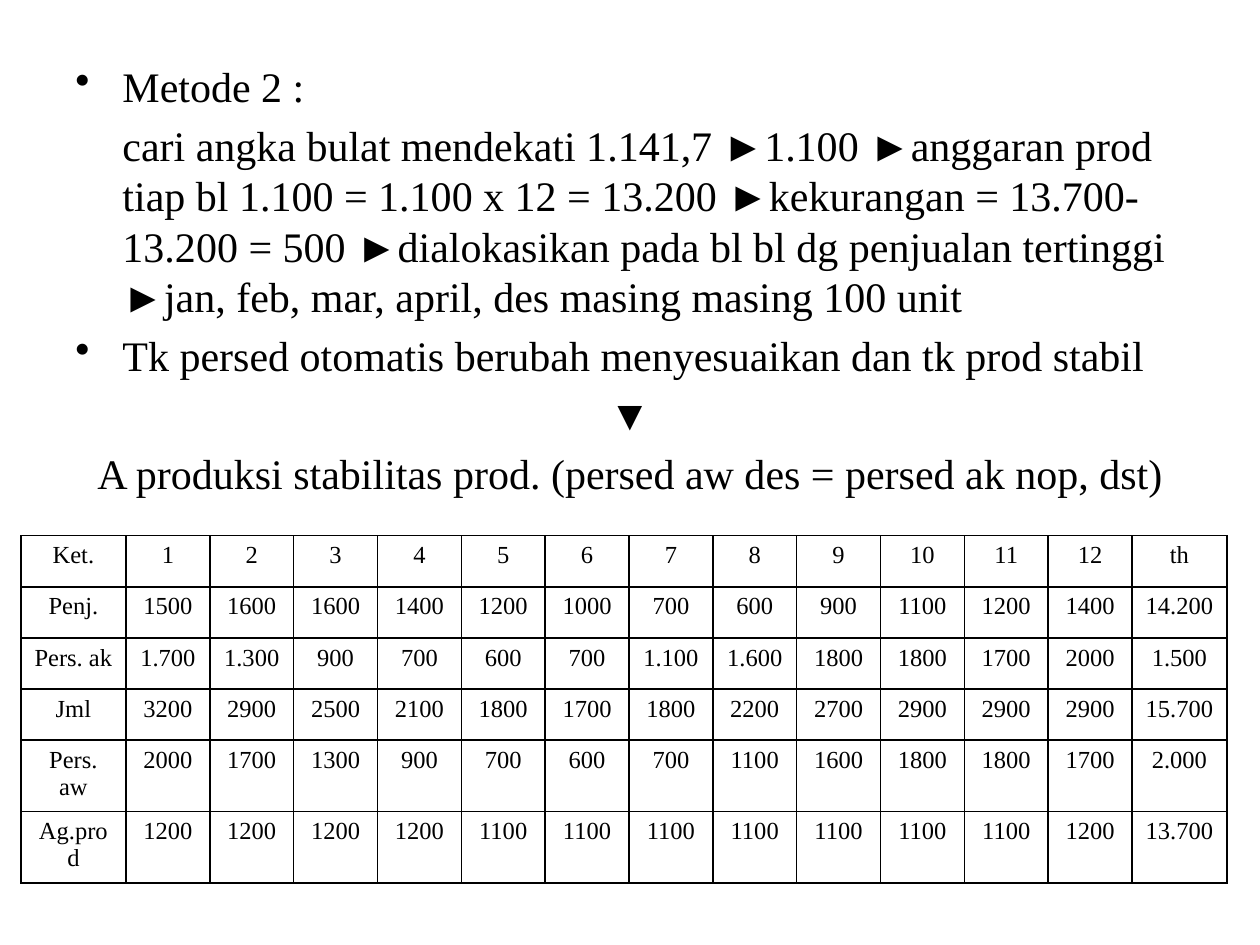
import pptx
import pptx.dml.color
import pptx.enum.text
import pptx.oxml
import pptx.oxml.ns
import pptx.util
from pptx.util import Cm

FONT = "Times New Roman"
BLACK = "000000"
CENTER = pptx.enum.text.PP_ALIGN.CENTER
INDENT = Cm(0.95)

# (text, kind) for each paragraph above the table
BODY = [
    ("Metode 2 :", "bullet"),
    ("cari angka bulat mendekati 1.141,7 ►1.100 ►anggaran prod tiap bl "
     "1.100 = 1.100 x 12 = 13.200 ►kekurangan = 13.700-13.200 = 500 "
     "►dialokasikan pada bl bl dg penjualan tertinggi ►jan, feb, mar, "
     "april, des masing masing 100 unit", "indented"),
    ("Tk persed otomatis berubah menyesuaikan dan tk prod stabil", "bullet"),
    ("▼", "centered"),
    ("A produksi stabilitas prod. (persed aw des = persed ak nop, dst)",
     "centered"),
]

BUDGET = [
    ["Ket.", *map(str, range(1, 13)), "th"],
    ["Penj.", "1500", "1600", "1600", "1400", "1200", "1000", "700",
     "600", "900", "1100", "1200", "1400", "14.200"],
    ["Pers. ak", "1.700", "1.300", "900", "700", "600", "700", "1.100",
     "1.600", "1800", "1800", "1700", "2000", "1.500"],
    ["Jml", "3200", "2900", "2500", "2100", "1800", "1700", "1800",
     "2200", "2700", "2900", "2900", "2900", "15.700"],
    ["Pers. aw", "2000", "1700", "1300", "900", "700", "600", "700",
     "1100", "1600", "1800", "1800", "1700", "2.000"],
    ["Ag.prod", *["1200"] * 4, *["1100"] * 7, "1200", "13.700"],
]


def color(value):
    return pptx.dml.color.RGBColor.from_string(value)


def write(p, text, size=24, align=None, before=0, line=None, fill=BLACK):
    r = p.add_run()
    r.text = text
    r.font.name = FONT
    r.font.size = pptx.util.Pt(size)
    r.font.color.rgb = color(fill)
    p.alignment = align
    p.space_before = pptx.util.Pt(before)
    if line:
        p.line_spacing = pptx.util.Pt(line)


def indent(p, bullet):
    pPr = p._p.get_or_add_pPr()
    pPr.set("marL", str(INDENT))
    if bullet:
        pPr.set("indent", str(-INDENT))
        pPr.append(pptx.oxml.parse_xml(
            f'<a:buChar {pptx.oxml.ns.nsdecls("a")} char="•"/>'))


def add_body(s, left, top, width, height):
    tf = s.shapes.add_textbox(left, top, width, height).text_frame
    tf.word_wrap = True
    for i, (text, kind) in enumerate(BODY):
        p = tf.add_paragraph() if i else tf.paragraphs[0]
        if kind != "centered":
            indent(p, kind == "bullet")
        write(p, text, align=CENTER if kind == "centered" else None,
              before=4.8 if i else 0, line=28.8)


def add_borders(cell, value=BLACK, width=1):
    tcPr = cell._tc.get_or_add_tcPr()
    for side in ("lnL", "lnR", "lnT", "lnB"):
        tcPr.append(pptx.oxml.parse_xml(
            f'<a:{side} {pptx.oxml.ns.nsdecls("a")} '
            f'w="{pptx.util.Pt(width)}"><a:solidFill>'
            f'<a:srgbClr val="{value}"/></a:solidFill></a:{side}>'))


def add_budget(s, left, top, widths, row_height):
    frame = s.shapes.add_table(len(BUDGET), len(widths), left, top,
                               sum(widths), row_height * len(BUDGET))
    table = frame.table
    table.first_row = table.horz_banding = False
    for column, width in zip(table.columns, widths):
        column.width = width
    for row, values in zip(table.rows, BUDGET):
        row.height = row_height
        for cell, text in zip(row.cells, values):
            add_borders(cell)
            cell.fill.background()
            write(cell.text_frame.paragraphs[0], text, size=14, align=CENTER)


def main():
    prs = pptx.Presentation()
    prs.slide_width, prs.slide_height = Cm(25.4), Cm(19.05)
    s = prs.slides.add_slide(prs.slide_layouts[6])

    # Explanation of the method
    add_body(s, Cm(1.27), Cm(1.1), Cm(22.86), Cm(9.5))

    # Monthly production budget: label, twelve months, year
    widths = [Cm(2.12), *[Cm(1.69)] * 12, Cm(1.91)]
    add_budget(s, Cm(0.42), Cm(10.8), widths, Cm(1.03))

    prs.save("out.pptx")


if __name__ == "__main__":
    main()
